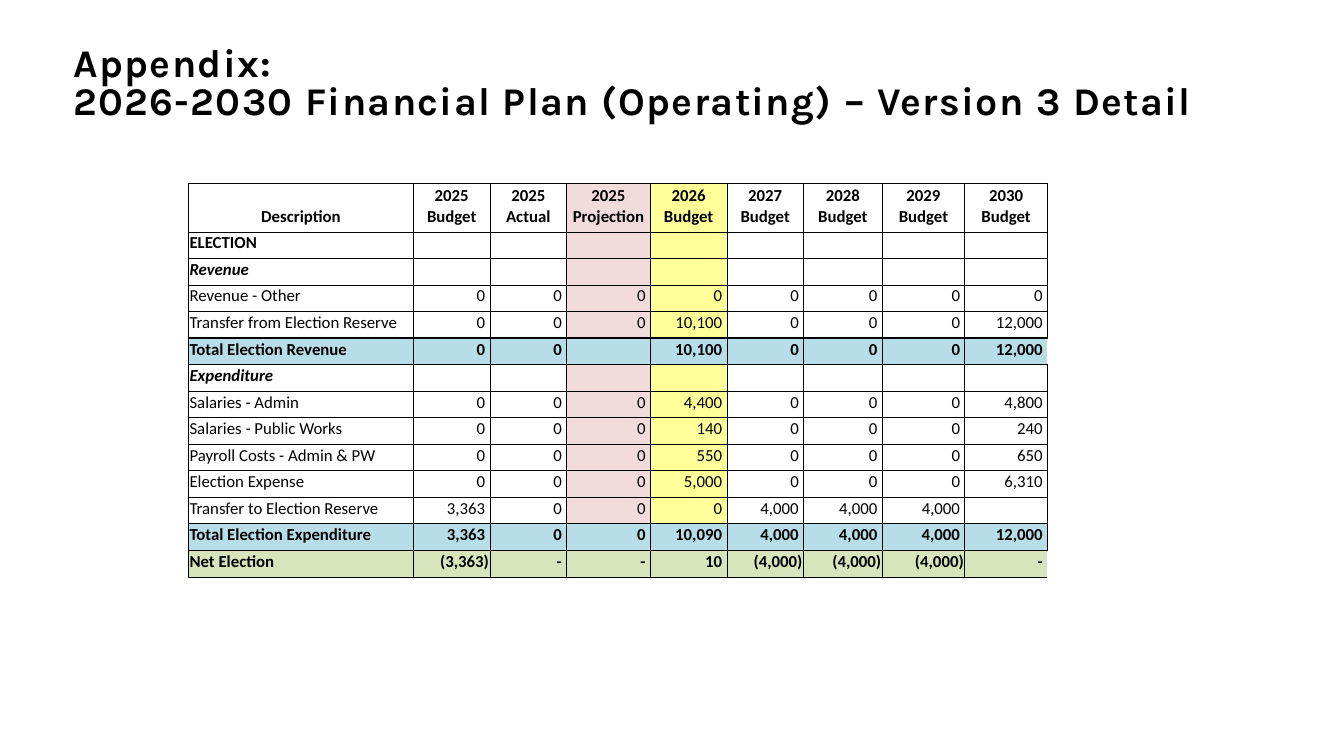
from lxml.etree import SubElement
from pptx import Presentation
from pptx.dml.color import RGBColor
from pptx.enum.text import MSO_ANCHOR as Anchor, MSO_AUTO_SIZE as AutoSize, PP_ALIGN as Align
from pptx.oxml.ns import qn
from pptx.util import Inches, Pt

BLACK = RGBColor(0x00, 0x00, 0x00)
PROJECTION_PINK = RGBColor(0xF2, 0xDC, 0xDB)
BUDGET_YELLOW = RGBColor(0xFF, 0xFF, 0x99)
TOTAL_BLUE = RGBColor(0xB7, 0xDE, 0xE8)
NET_GREEN = RGBColor(0xD8, 0xE4, 0xBC)

COLUMN_FILLS = {3: PROJECTION_PINK, 4: BUDGET_YELLOW}
ROW_FILLS = {"total": TOTAL_BLUE, "net": NET_GREEN}
COLUMN_WIDTHS = [2.23, 0.76, 0.76, 0.83, 0.76, 0.76, 0.78, 0.82, 0.82]
HEADER_HEIGHT, ROW_HEIGHT = 0.48, 0.21
THIN, THICK = Pt(0.5), Pt(1)

# Row kind, description, then one value per year column
PLAN = [
    ("header", "Description", "2025 Budget", "2025 Actual", "2025 Projection", "2026 Budget",
     "2027 Budget", "2028 Budget", "2029 Budget", "2030 Budget"),
    ("section", "ELECTION", *[""] * 8),
    ("group", "Revenue", *[""] * 8),
    ("item", "Revenue - Other", *["0"] * 8),
    ("item", "Transfer from Election Reserve", "0", "0", "0", "10,100", "0", "0", "0", "12,000"),
    ("total", "Total Election Revenue", "0", "0", "", "10,100", "0", "0", "0", "12,000"),
    ("group", "Expenditure", *[""] * 8),
    ("item", "Salaries - Admin", "0", "0", "0", "4,400", "0", "0", "0", "4,800"),
    ("item", "Salaries - Public Works", "0", "0", "0", "140", "0", "0", "0", "240"),
    ("item", "Payroll Costs - Admin & PW", "0", "0", "0", "550", "0", "0", "0", "650"),
    ("item", "Election Expense", "0", "0", "0", "5,000", "0", "0", "0", "6,310"),
    ("item", "Transfer to Election Reserve", "3,363", "0", "0", "0", "4,000", "4,000", "4,000", ""),
    ("total", "Total Election Expenditure", "3,363", "0", "0", "10,090", "4,000", "4,000", "4,000",
     "12,000"),
    ("net", "Net Election", "(3,363)", "-", "-", "10", "(4,000)", "(4,000)", "(4,000)", "-"),
]
OPEN_RIGHT_ROWS = ("Total Election Revenue", "Net Election")


class PlanSlide:
    title_font, table_font = "Karla", "Calibri"
    title_size, table_size = Pt(28), Pt(12)

    def __init__(self, presentation):
        self.slide = presentation.slides.add_slide(presentation.slide_layouts[5])

    def title(self, text, left, top, width, height):
        heading = self.slide.shapes.title
        heading.left, heading.top = Inches(left), Inches(top)
        heading.width, heading.height = Inches(width), Inches(height)
        frame = heading.text_frame
        frame.text = text
        frame.word_wrap = True
        frame.auto_size = AutoSize.NONE
        frame.vertical_anchor = Anchor.BOTTOM
        frame.margin_left = frame.margin_top = frame.margin_right = frame.margin_bottom = 0
        paragraph = frame.paragraphs[0]
        paragraph.alignment = Align.LEFT
        paragraph.line_spacing = 0.8
        self.style(paragraph, self.title_font, self.title_size, bold=True)
        paragraph.font._rPr.set("spc", "100")

    def style(self, paragraph, name, size, bold=False, italic=False):
        font = paragraph.font
        font.name, font.size = name, size
        font.bold, font.italic = bold, italic
        font.color.rgb = BLACK

    def plan_table(self, plan, left, top):
        height = HEADER_HEIGHT + ROW_HEIGHT * (len(plan) - 1)
        table = self.slide.shapes.add_table(
            len(plan), len(COLUMN_WIDTHS), Inches(left), Inches(top),
            Inches(sum(COLUMN_WIDTHS)), Inches(height)).table
        table.horz_banding = False
        for column, width in zip(table.columns, COLUMN_WIDTHS):
            column.width = Inches(width)
        next_kinds = [kind for kind, *_ in plan[1:]] + [None]
        for row, (kind, *texts), next_kind in zip(table.rows, plan, next_kinds):
            row.height = Inches(HEADER_HEIGHT if kind == "header" else ROW_HEIGHT)
            for index, (cell, text) in enumerate(zip(row.cells, texts)):
                self.cell(cell, text, kind, index)
                is_open = index == len(texts) - 1 and texts[0] in OPEN_RIGHT_ROWS
                self.borders(cell, {
                    "a:lnL": THIN,
                    "a:lnR": None if is_open else THIN,
                    "a:lnT": THICK if kind == "total" else THIN,
                    "a:lnB": THICK if next_kind == "total" else THIN,
                })

    def cell(self, cell, text, kind, index):
        cell.margin_left = cell.margin_top = cell.margin_right = Inches(0.01)
        cell.margin_bottom = Inches(0.05)
        cell.vertical_anchor = Anchor.BOTTOM
        fill = ROW_FILLS.get(kind, COLUMN_FILLS.get(index))
        if fill is None:
            cell.fill.background()
        else:
            cell.fill.solid()
            cell.fill.fore_color.rgb = fill

        is_value = index > 0 and kind != "header"
        # A trailing space lines digits up with those inside parentheses
        cell.text = text + " " if is_value and text and not text.endswith(")") else text
        paragraph = cell.text_frame.paragraphs[0]
        if kind == "header":
            paragraph.alignment = Align.CENTER
        else:
            paragraph.alignment = Align.RIGHT if is_value else Align.LEFT
        self.style(paragraph, self.table_font, self.table_size,
                   bold=kind != "item", italic=kind == "group")
        if not text:
            SubElement(paragraph._p, qn("a:endParaRPr"), sz=str(int(self.table_size.pt * 100)))

    def borders(self, cell, widths):
        properties = cell._tc.get_or_add_tcPr()
        for position, (side, width) in enumerate(widths.items()):
            line = SubElement(properties, qn(side))
            properties.insert(position, line)
            if width is None:
                SubElement(line, qn("a:noFill"))
            else:
                line.set("w", str(width))
                SubElement(SubElement(line, qn("a:solidFill")), qn("a:srgbClr"), val=str(BLACK))


def main():
    presentation = Presentation()
    presentation.slide_width, presentation.slide_height = Inches(13.33), Inches(7.5)
    page = PlanSlide(presentation)
    page.title("Appendix:\v2026-2030 Financial Plan (Operating) – Version 3 Detail",
               0.73, -0.12, 11.57, 1.34)
    page.plan_table(PLAN, 1.87, 1.82)
    presentation.save("out.pptx")


if __name__ == "__main__":
    main()
